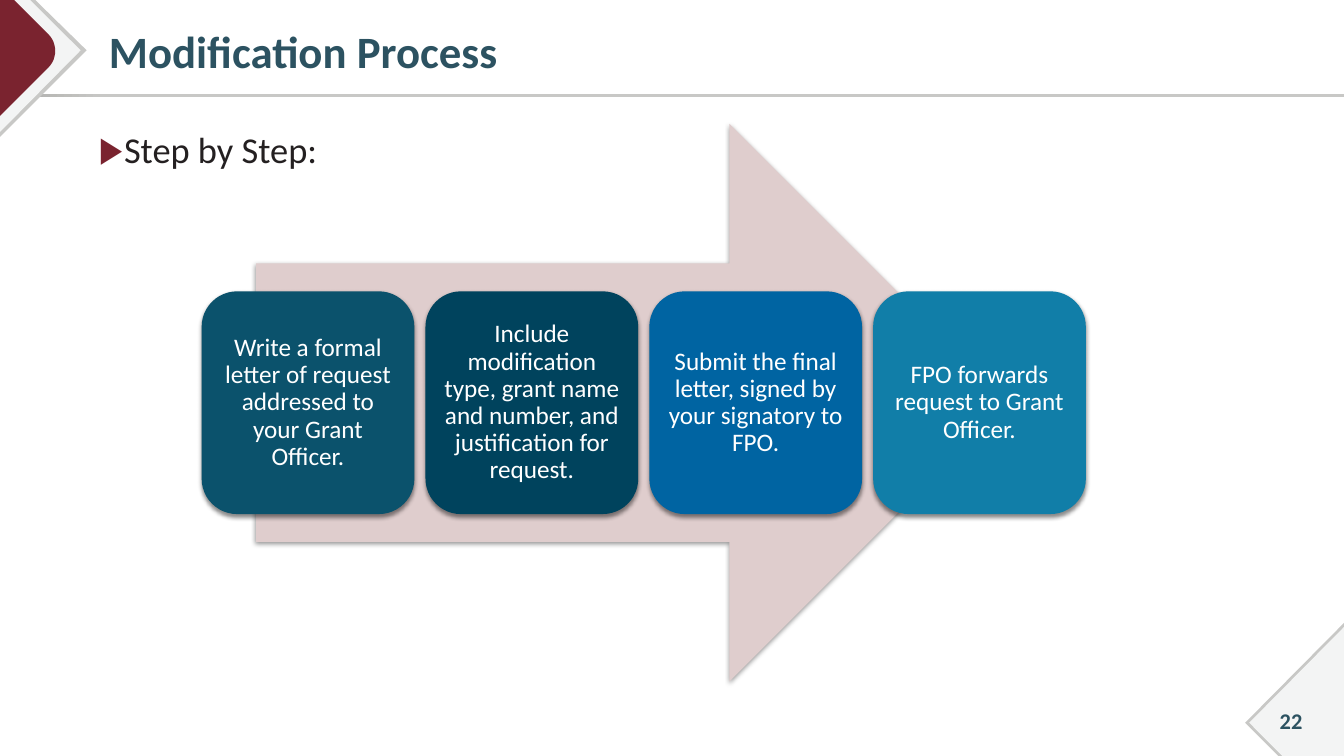
from lxml.etree import SubElement
from pptx import Presentation
from pptx.dml.color import RGBColor
from pptx.enum.shapes import MSO_SHAPE
from pptx.enum.text import MSO_ANCHOR, MSO_AUTO_SIZE, PP_ALIGN
from pptx.oxml.ns import qn
from pptx.util import Inches, Pt

WHITE = RGBColor(0xFF, 0xFF, 0xFF)
MAROON = RGBColor(0x7A, 0x23, 0x2F)
SLATE = RGBColor(0x2C, 0x52, 0x61)
INK = RGBColor(0x24, 0x20, 0x21)
GREY = RGBColor(0xC8, 0xC8, 0xC6)
DARK_GREY = RGBColor(0xAB, 0xAB, 0xA8)
PALE_GREY = RGBColor(0xF3, 0xF4, 0xF4)
PINK = RGBColor(0xDF, 0xCD, 0xCD)

STEPS = [
    ("Write a formal letter of request addressed to your Grant Officer.",
     RGBColor(0x0B, 0x52, 0x6C)),
    ("Include modification type, grant name and number, and justification for request.",
     RGBColor(0x00, 0x43, 0x5D)),
    ("Submit the final letter, signed by your signatory to FPO.",
     RGBColor(0x00, 0x64, 0xA2)),
    ("FPO forwards request to Grant Officer.", RGBColor(0x11, 0x7E, 0xA8)),
]


def curve(start, control_1, control_2, end, pieces=12):
    """Points along a cubic Bezier curve, both ends included."""
    points = []
    for i in range(pieces + 1):
        t = i / pieces
        weights = ((1 - t) ** 3, 3 * t * (1 - t) ** 2, 3 * t * t * (1 - t), t ** 3)
        points.append(tuple(
            sum(w * value for w, value in zip(weights, values))
            for values in zip(start, control_1, control_2, end)))
    return points


class ProcessSlide:
    font_name = "Calibri"

    def __init__(self, presentation):
        self.slide = presentation.slides.add_slide(presentation.slide_layouts[1])
        self.shapes = self.slide.shapes

    def set_text(self, paragraph, text, size, color, bold=False,
                 align=PP_ALIGN.LEFT, line_spacing=1.0):
        paragraph.text = text
        paragraph.alignment = align
        paragraph.line_spacing = line_spacing
        paragraph.space_before = Pt(0)
        font = paragraph.font
        font.name, font.size, font.bold = self.font_name, Pt(size), bold
        font.color.rgb = color

    def place(self, placeholder, left, top, width, height):
        placeholder.left, placeholder.top = Inches(left), Inches(top)
        placeholder.width, placeholder.height = Inches(width), Inches(height)
        frame = placeholder.text_frame
        frame.auto_size = MSO_AUTO_SIZE.NONE
        frame.vertical_anchor = MSO_ANCHOR.TOP
        return frame

    def title(self, text):
        frame = self.place(self.shapes.title, 0.88, 0.25, 12.12, 0.86)
        frame.margin_left = Inches(0.2)
        self.set_text(frame.paragraphs[0], text, 32, SLATE, bold=True, line_spacing=0.9)

    def body(self, text):
        frame = self.place(self.slide.placeholders[1], 0.88, 1.24, 12.12, 5.51)
        paragraph = frame.paragraphs[0]
        properties = paragraph._p.get_or_add_pPr()
        properties.set("marL", str(Inches(0.25)))
        properties.set("indent", str(-Inches(0.25)))
        bullet_color = SubElement(properties, qn("a:buClr"))
        SubElement(bullet_color, qn("a:srgbClr"), val=str(MAROON))
        SubElement(properties, qn("a:buChar"), char="▶")
        self.set_text(paragraph, text, 26, INK, line_spacing=0.95)

    def paint(self, shape, color):
        shape.fill.solid()
        shape.fill.fore_color.rgb = color
        shape.line.fill.background()
        shape.shadow.inherit = False

    def outline(self, points, color):
        corners = [(Inches(x), Inches(y)) for x, y in points]
        builder = self.shapes.build_freeform(*corners[0], scale=1.0)
        builder.add_line_segments(corners[1:], close=True)
        self.paint(builder.convert_to_shape(), color)

    def header_rule(self):
        rule = self.shapes.add_shape(
            MSO_SHAPE.RECTANGLE, 0, Inches(0.93), Inches(13.33), Inches(0.03))
        self.paint(rule, GREY)
        rule.fill.gradient()
        rule.fill.gradient_angle = 0
        for stop, position, color in zip(
                rule.fill.gradient_stops, (0, 0.08), (DARK_GREY, GREY)):
            stop.position = position
            stop.color.rgb = color

    def shaded_shape(self, kind, left, top, width, height, color, distance, opacity):
        """Add a filled shape with a soft shadow straight below it."""
        shape = self.shapes.add_shape(
            kind, Inches(left), Inches(top), Inches(width), Inches(height))
        self.paint(shape, color)
        effects = shape._element.spPr.find(qn("a:effectLst"))
        shadow = SubElement(effects, qn("a:outerShdw"), blurRad=str(Pt(3)),
                            dist=str(Pt(distance)), dir="5400000", rotWithShape="0")
        shadow_color = SubElement(shadow, qn("a:srgbClr"), val="000000")
        SubElement(shadow_color, qn("a:alpha"), val=str(opacity * 1000))
        return shape

    def arrow(self):
        self.shaded_shape(MSO_SHAPE.RIGHT_ARROW, 2.54, 1.23, 7.46, 5.53, PINK, 1.4, 40)

    def step(self, left, text, color):
        card = self.shaded_shape(
            MSO_SHAPE.ROUNDED_RECTANGLE, left, 2.89, 2.11, 2.21, color, 2, 45)
        frame = card.text_frame
        frame.word_wrap = True
        frame.vertical_anchor = MSO_ANCHOR.MIDDLE
        frame.margin_left = frame.margin_right = Inches(0.07)
        frame.margin_top = frame.margin_bottom = Inches(0.07)
        self.set_text(frame.paragraphs[0], text, 18, WHITE,
                      align=PP_ALIGN.CENTER, line_spacing=0.9)

    def page_number(self, number):
        box = self.shapes.add_textbox(
            Inches(12.45), Inches(6.95), Inches(0.71), Inches(0.4))
        frame = box.text_frame
        frame.word_wrap = True
        frame.vertical_anchor = MSO_ANCHOR.MIDDLE
        self.set_text(frame.paragraphs[0], number, 16, SLATE, bold=True,
                      align=PP_ALIGN.CENTER)


def main():
    presentation = Presentation()
    presentation.slide_width, presentation.slide_height = Inches(13.33), Inches(7.5)
    page = ProcessSlide(presentation)

    page.header_rule()
    page.outline([(0, 0), (0.35, 0), (0.86, 0.5), (0, 1.36)], GREY)
    page.outline([(0, 0), (0.3, 0), (0.8, 0.5), (0, 1.31)], PALE_GREY)
    rounded_tip = curve((0.48, 0.34), (0.57, 0.43), (0.57, 0.58), (0.48, 0.67))
    page.outline([(0, 0), (0.14, 0), *rounded_tip, (0, 1.15)], MAROON)
    page.outline([(13.33, 6.18), (13.33, 7.5), (12.68, 7.5), (12.35, 7.17)], GREY)
    page.outline([(13.33, 6.22), (13.33, 7.5), (12.72, 7.5), (12.39, 7.17)], PALE_GREY)

    page.title("Modification Process")
    page.body("Step by Step:")
    page.page_number("22")

    page.arrow()
    for index, (text, color) in enumerate(STEPS):
        page.step(2 + 2.22 * index, text, color)

    presentation.save("out.pptx")


if __name__ == "__main__":
    main()
